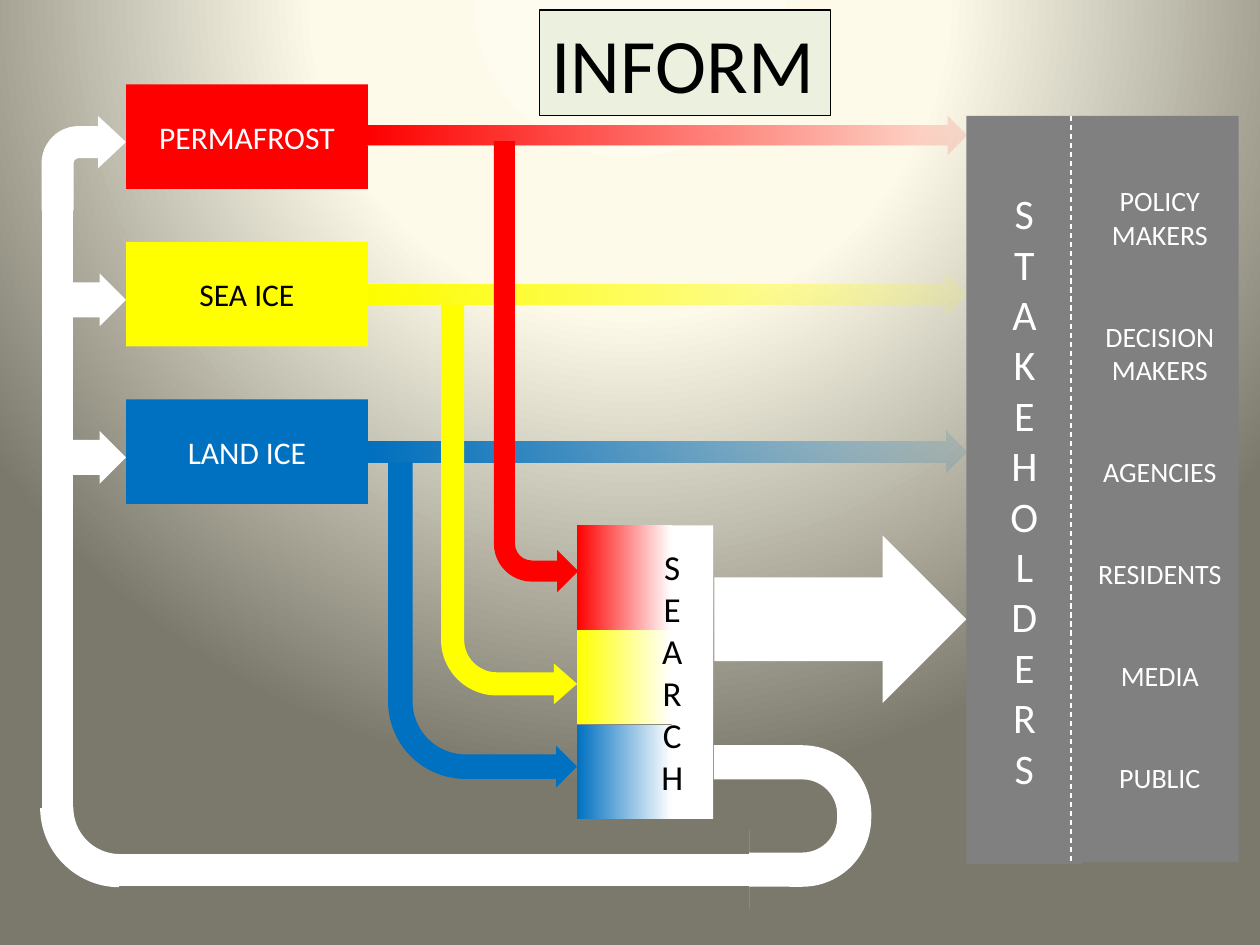
import copy
from dataclasses import dataclass
from typing import Optional, Sequence

import pptx
import pptx.dml.color
import pptx.enum.dml
import pptx.enum.shapes
import pptx.enum.text
import pptx.oxml
import pptx.oxml.ns
import pptx.util

Inches = pptx.util.Inches
RGBColor = pptx.dml.color.RGBColor
Kind = pptx.enum.shapes.MSO_SHAPE
Align = pptx.enum.text.PP_ALIGN
qn = pptx.oxml.ns.qn

WHITE = RGBColor(0xFF, 0xFF, 0xFF)
BLACK = RGBColor(0, 0, 0)
RED = RGBColor(0xFF, 0, 0)
YELLOW = RGBColor(0xFF, 0xFF, 0)
BLUE = RGBColor(0, 0x70, 0xC0)
GREY = RGBColor(0x80, 0x80, 0x80)
PALE_GREEN = RGBColor(0xEB, 0xF1, 0xDE)
CREAM = RGBColor(0xFE, 0xFC, 0xEE)
IVORY = RGBColor(0xFD, 0xFA, 0xEA)
OLIVE = RGBColor(0x7B, 0x79, 0x6B)


@dataclass(frozen=True)
class Block:
    kind: Kind
    left: float
    top: float
    width: float
    height: float
    fill: Optional[RGBColor] = WHITE
    fade_to: Optional[RGBColor] = None
    fade_opacity: int = 100
    adjustments: Sequence[float] = ()
    rotation: float = 0
    flipped: bool = False


@dataclass(frozen=True)
class Theme:
    name: str
    colour: RGBColor
    text_colour: RGBColor
    top: float
    fade_height: float
    fade_opacity: int
    bend: Sequence[float]
    bend_adjustments: Sequence[float]
    search_top: float
    search_height: float


THEMES = [
    Theme("PERMAFROST", RED, WHITE, 0.67, 0.31, 10,
          (3.92, 1.12, 0.67, 3.58), (0.25, 0.25, 0.25, 0.45), 4.17, 0.83),
    Theme("SEA ICE", YELLOW, BLACK, 1.92, 0.33, 10,
          (3.5, 2.42, 1.08, 3.17), (0.17, 0.15, 0.17, 0.41), 5, 0.75),
    Theme("LAND ICE", BLUE, WHITE, 3.17, 0.33, 11,
          (3.08, 3.67, 1.5, 2.58), (0.13, 0.11, 0.11, 0.41), 5.75, 0.75),
]

FEEDBACK_LOOP = [
    Block(Kind.RIGHT_ARROW, 5.67, 4.25, 2, 1.33),
    Block(Kind.U_TURN_ARROW, 5.64, 5.94, 1.3, 1.25,
          adjustments=(0.217, 0.25, 0, 0.438, 0.776), rotation=90),
    Block(Kind.BENT_ARROW, 0.33, 0.92, 0.67, 0.75,
          adjustments=(0.38, 0.31, 0.33, 0.44)),
    Block(Kind.FLOWCHART_PROCESS, 0.33, 1.67, 0.25, 4.75),
    Block(Kind.FLOWCHART_PROCESS, 0.93, 6.78, 5.16, 0.25),
    Block(Kind.RIGHT_ARROW, 0.58, 2.17, 0.42, 0.42, adjustments=(0.66, 0.5)),
    Block(Kind.RIGHT_ARROW, 0.58, 3.42, 0.42, 0.42, adjustments=(0.66, 0.5)),
    Block(Kind.RECTANGLE, 5.33, 4.17, 0.33, 2.33),
]

AUDIENCES = [["POLICY", "MAKERS"], ["DECISION", "MAKERS"], ["AGENCIES"],
             ["RESIDENTS"], ["MEDIA"], ["PUBLIC"]]


def draw_block(slide, block: Block):
    shape = slide.shapes.add_shape(
        block.kind, Inches(block.left), Inches(block.top),
        Inches(block.width), Inches(block.height))
    shape.shadow.inherit = False
    shape.line.fill.background()
    shape.rotation = block.rotation
    for index, value in enumerate(block.adjustments):
        shape.adjustments[index] = value
    if block.flipped:
        shape.element.spPr.find(qn("a:xfrm")).set("flipV", "1")
    if block.fill is None:
        shape.fill.background()
    elif block.fade_to is None:
        shape.fill.solid()
        shape.fill.fore_color.rgb = block.fill
    else:
        shape.fill.gradient()
        shape.fill.gradient_angle = 0
        start, end = shape.fill.gradient_stops
        start.color.rgb, end.color.rgb = block.fill, block.fade_to
        start.position, end.position = 0, 1
        if block.fade_opacity < 100:
            tint = shape.element.spPr.findall(".//" + qn("a:srgbClr"))[-1]
            alpha = pptx.oxml.parse_xml(
                '<a:alpha xmlns:a="http://schemas.openxmlformats.org/drawingml/2006/main"'
                f' val="{block.fade_opacity * 1000}"/>')
            tint.append(alpha)
    return shape


def write_groups(shape, groups: Sequence[Sequence[str]], size: float,
                 colour: RGBColor, gap: float = 0, align=Align.CENTER) -> None:
    frame = shape.text_frame
    frame.word_wrap = True
    frame.vertical_anchor = pptx.enum.text.MSO_ANCHOR.MIDDLE
    frame.text = "\n".join(line for group in groups for line in group)
    paragraphs = iter(frame.paragraphs)
    for number, group in enumerate(groups):
        for position, _ in enumerate(group):
            paragraph = next(paragraphs)
            paragraph.alignment = align
            if gap and number and position == 0:
                paragraph.space_before = pptx.util.Pt(gap)
            paragraph.font.name = "Calibri"
            paragraph.font.size = pptx.util.Pt(size)
            paragraph.font.color.rgb = colour


def paint_background(slide) -> None:
    fill = slide.background.fill
    fill.gradient()
    gradient = slide.element.find(".//" + qn("a:gradFill"))
    stop_list = gradient.find(qn("a:gsLst"))
    stop_list.append(copy.deepcopy(stop_list[-1]))
    for stop, position, colour in zip(fill.gradient_stops, (0, 0.4, 1),
                                      (CREAM, IVORY, OLIVE)):
        stop.position = position
        stop.color.rgb = colour
    radial = pptx.oxml.parse_xml(
        '<a:path xmlns:a="http://schemas.openxmlformats.org/drawingml/2006/main" path="circle">'
        '<a:fillToRect l="50000" t="-80000" r="50000" b="180000"/></a:path>')
    gradient.replace(gradient.find(qn("a:lin")), radial)


def draw_themes(slide) -> None:
    for theme in THEMES:
        box = draw_block(slide, Block(Kind.RECTANGLE, 1, theme.top, 1.92, 0.83, theme.colour))
        write_groups(box, [[theme.name]], 18, theme.text_colour)
        draw_block(slide, Block(Kind.RIGHT_ARROW, 2.92, theme.top + 0.25, 4.75,
                                theme.fade_height, theme.colour, theme.colour,
                                theme.fade_opacity))
    for theme in THEMES:
        draw_block(slide, Block(Kind.BENT_ARROW, *theme.bend, theme.colour,
                                adjustments=theme.bend_adjustments, flipped=True))
        draw_block(slide, Block(Kind.RECTANGLE, 4.58, theme.search_top, 0.75,
                                theme.search_height, theme.colour, WHITE))


def draw_feedback_loop(slide) -> None:
    for block in FEEDBACK_LOOP:
        draw_block(slide, block)
    corner = draw_block(slide, Block(Kind.ARC, 0.45, 5.91, 1, 1, None, rotation=180))
    corner.line.color.rgb = WHITE
    corner.line.width = pptx.util.Pt(19)
    search = slide.shapes.add_textbox(Inches(5), Inches(4.33), Inches(0.67), Inches(2))
    write_groups(search, [list("SEARCH")], 20, BLACK)


def draw_stakeholders(slide) -> None:
    audiences = draw_block(slide, Block(Kind.RECTANGLE, 8.58, 0.92, 1.25, 5.92, GREY))
    write_groups(audiences, AUDIENCES, 16, WHITE, gap=39)
    stakeholders = draw_block(slide, Block(Kind.RECTANGLE, 7.67, 0.92, 0.92, 5.94, GREY))
    write_groups(stakeholders, [list("STAKEHOLDERS")], 24, WHITE)
    divider = slide.shapes.add_connector(
        pptx.enum.shapes.MSO_CONNECTOR.STRAIGHT,
        Inches(8.5), Inches(0.92), Inches(8.5), Inches(6.83))
    divider.line.color.rgb = WHITE
    divider.line.width = pptx.util.Pt(0.75)
    divider.line.dash_style = pptx.enum.dml.MSO_LINE.DASH
    divider.element.spPr.append(pptx.oxml.parse_xml(
        '<a:effectLst xmlns:a="http://schemas.openxmlformats.org/drawingml/2006/main"/>'))


def draw_title(slide) -> None:
    title = draw_block(slide, Block(Kind.RECTANGLE, 4.28, 0.08, 2.31, 0.84, PALE_GREEN))
    title.line.color.rgb = BLACK
    title.line.width = pptx.util.Pt(0.75)
    write_groups(title, [["INFORM"]], 44, BLACK, align=Align.LEFT)
    title.text_frame.word_wrap = False
    title.text_frame.auto_size = pptx.enum.text.MSO_AUTO_SIZE.SHAPE_TO_FIT_TEXT


def main() -> None:
    deck = pptx.Presentation()
    deck.slide_width, deck.slide_height = Inches(10), Inches(7.5)
    slide = deck.slides.add_slide(deck.slide_layouts[6])
    paint_background(slide)
    draw_themes(slide)
    draw_feedback_loop(slide)
    draw_stakeholders(slide)
    draw_title(slide)
    deck.save("out.pptx")


if __name__ == "__main__":
    main()
